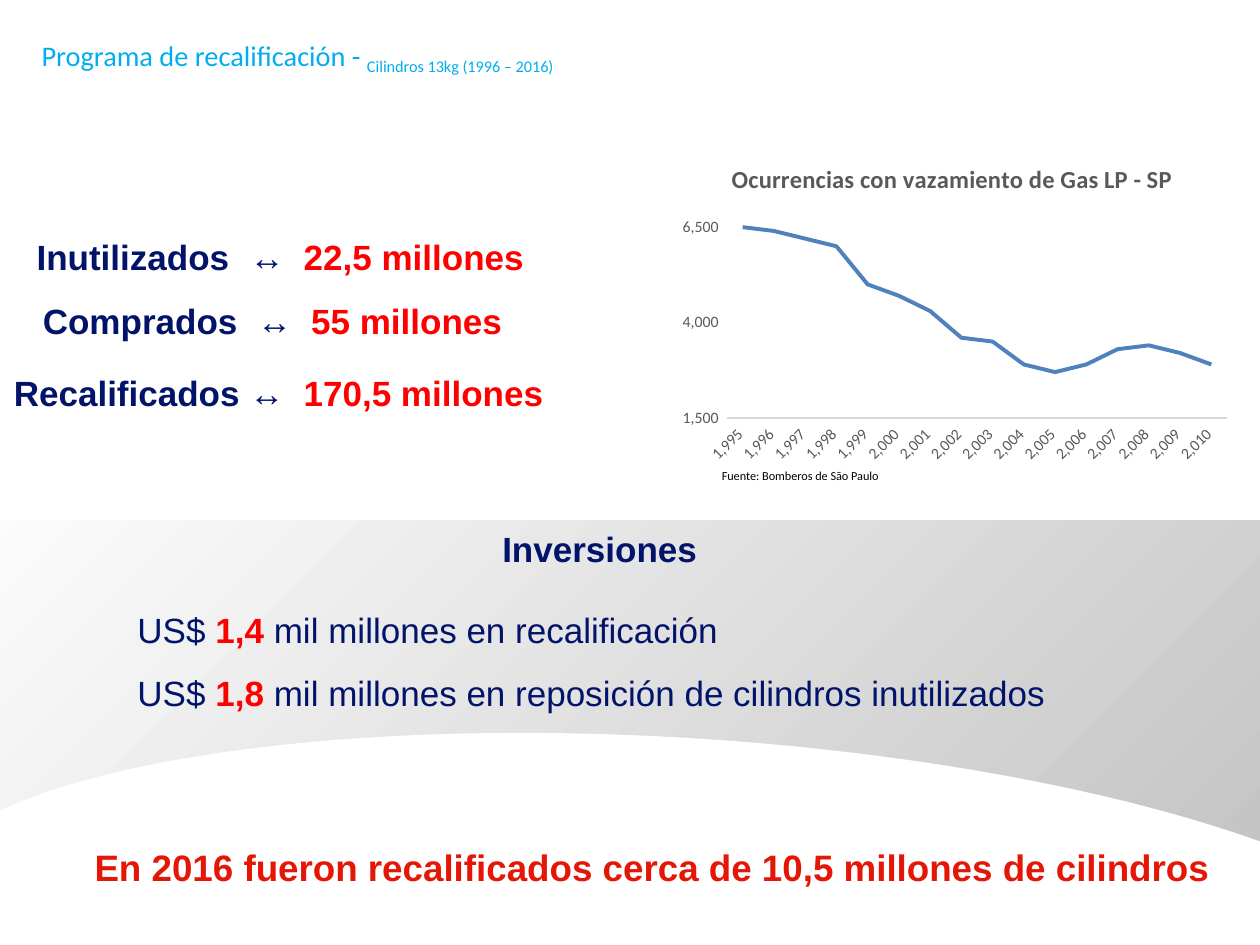
from typing import NamedTuple

from pptx import Presentation
from pptx.chart.data import CategoryChartData
from pptx.dml.color import RGBColor
from pptx.enum.chart import XL_CHART_TYPE, XL_TICK_MARK
from pptx.enum.shapes import MSO_SHAPE
from pptx.enum.text import MSO_ANCHOR, MSO_AUTO_SIZE, PP_ALIGN
from pptx.oxml import parse_xml
from pptx.oxml.ns import nsdecls
from pptx.util import Inches, Pt

NAVY, RED, CRIMSON, CYAN = "02136A", "FF0000", "E41606", "00AEEF"
GREY, BLUE, BLACK, WHITE = "595959", "4F81BD", "000000", "FFFFFF"
ARROW_TO_VALUE = 0.43
COUNT_FORMAT = '_-* #,##0_-;_-* #,##0\\-;_-* "-"??_-;_-@_'


class Run(NamedTuple):
    text: str
    size: float
    color: str
    bold: bool = False
    font: str = "Arial"


class Label(NamedTuple):
    box: tuple
    run: Run
    inset: tuple
    align: PP_ALIGN = PP_ALIGN.LEFT
    spacing: float = 1.5


class Figure(NamedTuple):
    box: tuple
    name: str
    value: str
    arrow_stop: float
    inset: float = 0


FIGURES = [
    Figure((0.24, 1.65, 4.08, 0.55), "Inutilizados", "22,5 millones", 1.69, 0.05),
    Figure((0.34, 2.21, 3.76, 0.45), "Comprados", "55 millones", 1.7),
    Figure((0.11, 2.78, 4.32, 0.45), "Recalificados", "170,5 millones", 1.87),
]
LABELS = [
    Label((3.93, 3.97, 1.66, 0.54), Run("Inversiones", 20, NAVY, True), (0.05, 0.05), PP_ALIGN.CENTER),
    Label((0.11, 6.39, 9.72, 0.81),
          Run("En 2016 fueron recalificados cerca de 10,5 millones de cilindros", 21, CRIMSON, True),
          (0.64, 0.14)),
    Label((5.63, 3.67, 1.48, 0.22), Run("Fuente: Bomberos de São Paulo", 7, BLACK, font="Calibri"),
          (0.1, 0.05), spacing=1),
]
INVESTMENTS = [
    ("1,4 ", "mil millones en recalificación"),
    ("1,8 ", "mil millones en reposición de cilindros inutilizados"),
]
LEAKS = [6500, 6400, 6200, 6000, 5000, 4700, 4300, 3600,
         3500, 2900, 2700, 2900, 3300, 3400, 3200, 2900]


def rgb(color: str) -> RGBColor:
    return RGBColor.from_string(color)


def style(font, size: float, color: str, bold: bool = False, name: str = "Calibri") -> None:
    font.size, font.bold, font.name = Pt(size), bold, name
    font.color.rgb = rgb(color)


def place(sp, box: tuple) -> None:
    sp.left, sp.top, sp.width, sp.height = map(Inches, box)


def add_runs(p, runs: list, spacing: float = 1.5) -> None:
    p.line_spacing = spacing
    for run in runs:
        r = p.add_run()
        r.text = run.text
        style(r.font, run.size, run.color, run.bold, run.font)


def prepare(tf, inset_x: float, inset_y: float) -> None:
    tf.word_wrap = True
    tf.auto_size = MSO_AUTO_SIZE.NONE
    tf.vertical_anchor = MSO_ANCHOR.TOP
    tf.margin_left = tf.margin_right = Inches(inset_x)
    tf.margin_top = tf.margin_bottom = Inches(inset_y)


def add_label(s, label: Label) -> None:
    tf = s.shapes.add_textbox(*map(Inches, label.box)).text_frame
    prepare(tf, *label.inset)
    tf.margin_right = Inches(min(label.inset))
    p = tf.paragraphs[0]
    p.alignment = label.align
    add_runs(p, [label.run], label.spacing)


def add_figure(s, figure: Figure) -> None:
    tf = s.shapes.add_textbox(*map(Inches, figure.box)).text_frame
    prepare(tf, figure.inset, figure.inset)
    p = tf.paragraphs[0]
    stops = "".join(f'<a:tab pos="{Inches(x)}" algn="l"/>'
                    for x in (figure.arrow_stop, figure.arrow_stop + ARROW_TO_VALUE))
    p._p.get_or_add_pPr().append(parse_xml(f'<a:tabLst {nsdecls("a")}>{stops}</a:tabLst>'))
    add_runs(p, [Run(f"{figure.name}\t↔\t", 20, NAVY, True), Run(figure.value, 20, RED, True)])


def add_backdrop(s, kind: MSO_SHAPE, box: tuple, order: int, rotation: float = 0):
    sp = s.shapes.add_shape(kind, *map(Inches, box))
    sp.shadow.inherit = False
    sp.rotation = rotation
    sp.line.fill.background()
    sp.fill.solid()
    sp.fill.fore_color.rgb = rgb(WHITE)
    s.shapes.element.insert(2 + order, sp.element)
    return sp


def shade(sp) -> None:
    spPr = sp.element.spPr
    solid = spPr.find("{*}solidFill")
    spPr.replace(solid, parse_xml(
        f'<a:gradFill {nsdecls("a")} rotWithShape="1"><a:gsLst>'
        '<a:gs pos="0"><a:srgbClr val="BFBFBF"/></a:gs>'
        '<a:gs pos="100000"><a:srgbClr val="FFFFFF"/></a:gs></a:gsLst>'
        '<a:path path="circle"><a:fillToRect l="100000" t="100000"/></a:path></a:gradFill>'))


def set_layout(element, position: int, target: str, **fractions: float) -> None:
    for old in element.findall("{*}layout"):
        element.remove(old)
    inner = f'<c:layoutTarget val="{target}"/>' if target else ""
    modes = "".join(f'<c:{k}Mode val="edge"/>' for k in "xy")
    values = "".join(f'<c:{k} val="{v}"/>' for k, v in fractions.items())
    element.insert(position, parse_xml(
        f'<c:layout {nsdecls("c")}><c:manualLayout>{inner}{modes}{values}</c:manualLayout></c:layout>'))


def add_leak_chart(s) -> None:
    data = CategoryChartData(number_format=COUNT_FORMAT)
    data.categories = range(1995, 2011)
    data.categories.number_format = COUNT_FORMAT
    data.add_series("Series 1", LEAKS)
    box = map(Inches, (5.29, 1.16, 4.53, 2.59))
    chart = s.shapes.add_chart(XL_CHART_TYPE.LINE, *box, data).chart
    style(chart.font, 10, BLACK)
    chart.has_legend = False
    title = chart.chart_title
    title.text_frame.text = "Ocurrencias con vazamiento de Gas LP - SP"
    style(title.text_frame.paragraphs[0].runs[0].font, 14, GREY, True)
    title.include_in_layout = False
    set_layout(title._element, 1, "", x=0.106, y=0.035)

    plot = chart.plots[0]
    plot.vary_by_categories = False
    line = plot.series[0]
    line.smooth = False
    line.format.line.color.rgb = rgb(BLUE)
    line.format.line.width = Pt(2.25)
    set_layout(chart._chartSpace.chart.plotArea, 0, "inner", x=0.106, y=0.19, w=0.876, h=0.643)

    years, counts = chart.category_axis, chart.value_axis
    for axis in (years, counts):
        axis.has_major_gridlines = False
        axis.major_tick_mark = axis.minor_tick_mark = XL_TICK_MARK.NONE
        style(axis.tick_labels.font, 9, GREY)
        axis.tick_labels.number_format = COUNT_FORMAT
        axis.tick_labels.number_format_is_linked = False
    years.format.line.color.rgb = rgb("D9D9D9")
    years.format.line.width = Pt(0.75)
    years._element.txPr.bodyPr.set("rot", "-2700000")
    counts.format.line.fill.background()
    counts.minimum_scale, counts.maximum_scale, counts.major_unit = 1500, 7000, 2500


def fill_title(sp) -> None:
    place(sp, (0.23, -0.03, 8.62, 0.73))
    prepare(sp.text_frame, 0.1, 0.05)
    p = sp.text_frame.paragraphs[0]
    p.alignment = PP_ALIGN.LEFT
    add_runs(p, [Run("Programa de recalificación - ", 28, CYAN, font="Calibri"),
                 Run("Cilindros 13kg (1996 – 2016)", 16, CYAN, font="Calibri")])
    for r in p.runs:
        r.font._element.set("baseline", "30000")


def fill_investments(sp) -> None:
    place(sp, (1.04, 4.61, 7.45, 1.62))
    tf = sp.text_frame
    prepare(tf, 0.05, 0.05)
    for i, (amount, purpose) in enumerate(INVESTMENTS):
        p = tf.add_paragraph() if i else tf.paragraphs[0]
        pPr = p._p.get_or_add_pPr()
        pPr.set("marL", str(Inches(0.38)))
        pPr.set("indent", str(-Inches(0.38)))
        pPr.append(parse_xml(f'<a:buNone {nsdecls("a")}/>'))
        p.alignment = PP_ALIGN.JUSTIFY
        p.space_before = Pt(0)
        add_runs(p, [Run("US$ ", 20, NAVY), Run(amount, 20, RED, True), Run(purpose, 20, NAVY)])


def main() -> None:
    prs = Presentation()
    prs.slide_width, prs.slide_height = Inches(10), Inches(7.5)
    s = prs.slides.add_slide(prs.slide_layouts[1])
    shade(add_backdrop(s, MSO_SHAPE.RECTANGLE, (-0.83, 4.13, 11.02, 3.79), 0))
    add_backdrop(s, MSO_SHAPE.OVAL, (-0.73, 5.86, 12.36, 3.38), 1, 3.7)
    fill_title(s.shapes.title)
    fill_investments(s.placeholders[1])
    for figure in FIGURES:
        add_figure(s, figure)
    for label in LABELS:
        add_label(s, label)
    add_leak_chart(s)
    prs.save("out.pptx")


if __name__ == "__main__":
    main()
